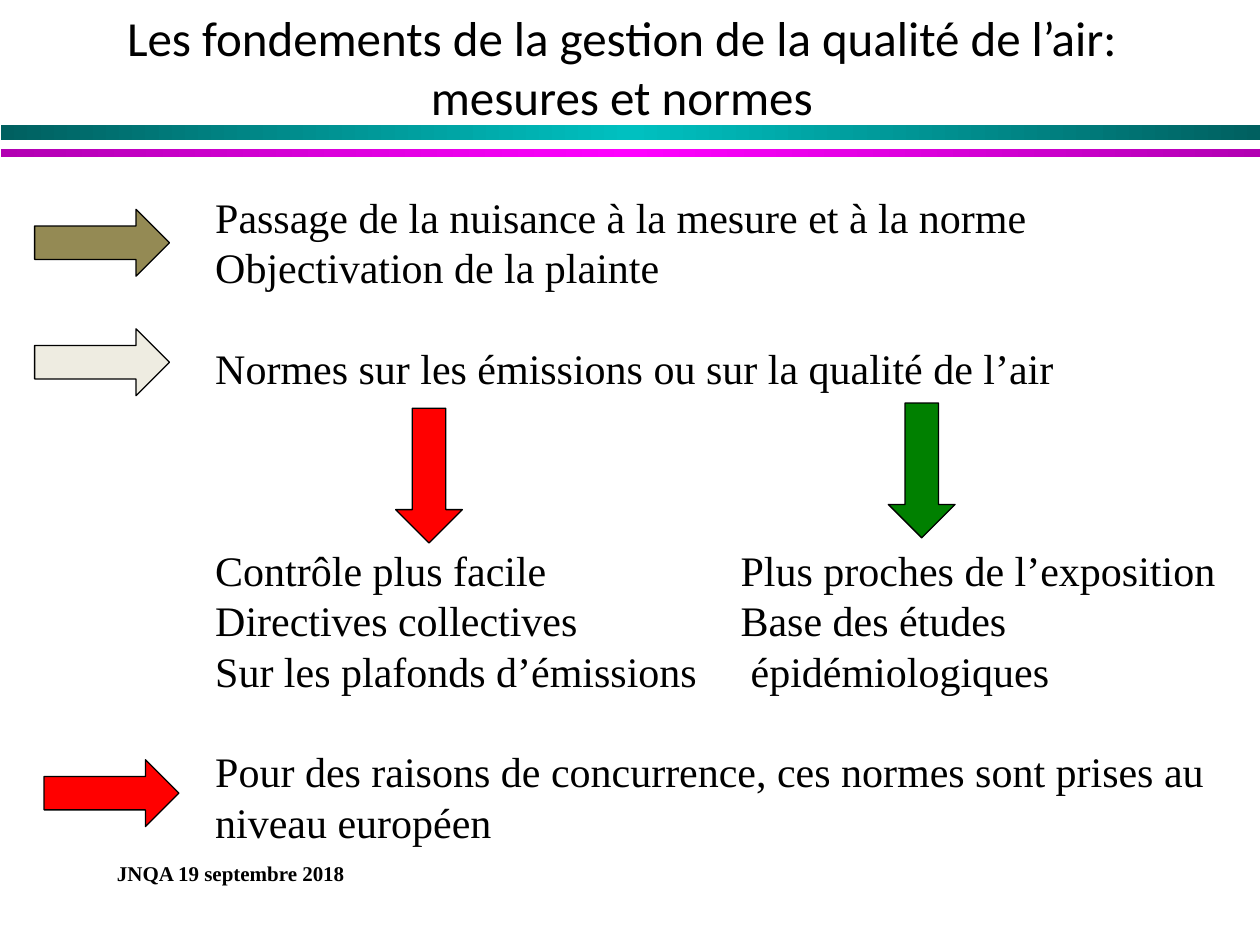
from copy import deepcopy

from pptx import Presentation
from pptx.dml.color import RGBColor
from pptx.enum.shapes import MSO_SHAPE
from pptx.enum.text import MSO_ANCHOR, PP_ALIGN
from pptx.oxml.ns import qn
from pptx.oxml.xmlchemy import OxmlElement
from pptx.util import Inches, Pt

RECTANGLE, RIGHT_ARROW = MSO_SHAPE.RECTANGLE, MSO_SHAPE.RIGHT_ARROW
TOP, MIDDLE = MSO_ANCHOR.TOP, MSO_ANCHOR.MIDDLE
LEFT, CENTER = PP_ALIGN.LEFT, PP_ALIGN.CENTER

BLACK = RGBColor(0x00, 0x00, 0x00)
DARK_TEAL = RGBColor(0x00, 0x60, 0x60)
TEAL = RGBColor(0x00, 0xC0, 0xC0)
PURPLE = RGBColor(0xB2, 0x00, 0xB2)
MAGENTA = RGBColor(0xFF, 0x00, 0xFF)
OLIVE = RGBColor(0x94, 0x8A, 0x54)
CREAM = RGBColor(0xEE, 0xEC, 0xE1)
RED = RGBColor(0xFF, 0x00, 0x00)
GREEN = RGBColor(0x00, 0x80, 0x00)

TITLE_FORMAT = {"name": "Calibri", "size": Pt(28)}
BODY_FORMAT = {"name": "Times New Roman", "size": Pt(24)}
FOOTER_FORMAT = {"name": "Times New Roman", "size": Pt(12), "bold": True}
ROW = 28.8  # height of one body line, in points

prs = Presentation()
prs.slide_width, prs.slide_height = Inches(10), Inches(7.5)
slide = prs.slides.add_slide(prs.slide_layouts[6])


def area(left, top, width, height):
    """Turn percentages of the slide's size into a position and size."""
    across, down = prs.slide_width / 100, prs.slide_height / 100
    return [round(v) for v in (left * across, top * down, width * across, height * down)]


def add_text(place, lines, font_format, align=LEFT, anchor=TOP):
    """Add a wrapped text box with one paragraph per line and return its paragraphs."""
    frame = slide.shapes.add_textbox(*area(*place)).text_frame
    frame.word_wrap = True
    frame.vertical_anchor = anchor
    frame.text = "\n".join(lines)
    for paragraph in frame.paragraphs:
        paragraph.alignment = align
        for run in paragraph.runs:
            run.font.color.rgb = BLACK
            for attribute, value in font_format.items():
                setattr(run.font, attribute, value)
    return frame.paragraphs


# Ruled bands under the title: top, height, edge colour, middle colour
for top, height, edge, middle in [
    (13.2, 1.6, DARK_TEAL, TEAL),
    (15.75, 0.85, PURPLE, MAGENTA),
]:
    band = slide.shapes.add_shape(RECTANGLE, *area(0.1, top, 99.9, height))
    band.shadow.inherit = False
    band.line.fill.background()
    band.fill.gradient()
    band.fill.gradient_angle = 0
    stops = next(band.element.iter(qn("a:gsLst")))
    stops.append(deepcopy(stops[0]))
    for stop, position, color in zip(band.fill.gradient_stops, (0, 0.5, 1), (edge, middle, edge)):
        stop.position = position
        stop.color.rgb = color

add_text((3.5, -1.33, 91.7, 16.67),
         ["Les fondements de la gestion de la qualité de l’air:\vmesures et normes"],
         TITLE_FORMAT, CENTER, MIDDLE)
add_text((8.3, 90.4, 23.1, 6.67), ["JNQA 19 septembre 2018"], FOOTER_FORMAT)

# Body: line, empty rows above it, position of its second column in inches
body = [
    ("Passage de la nuisance à la mesure et à la norme", 0, None),
    ("Objectivation de la plainte", 0, None),
    ("Normes sur les émissions ou sur la qualité de l’air", 1, None),
    ("Contrôle plus facile\tPlus proches de l’exposition", 3, 4.17),
    ("Directives collectives\tBase des études", 0, 4.17),
    ("Sur les plafonds d’émissions\tépidémiologiques", 0, 4.25),
    ("Pour des raisons de concurrence, ces normes sont prises au niveau européen", 1, None),
]
paragraphs = add_text((16.1, 19.6, 82.3, 70), [line for line, _, _ in body], BODY_FORMAT)
for paragraph, (_, empty_rows, column) in zip(paragraphs, body):
    if column:
        tabs = OxmlElement("a:tabLst")
        tab = OxmlElement("a:tab")
        tab.set("pos", str(Inches(column)))
        tab.set("algn", "l")
        tabs.append(tab)
        paragraph._p.get_or_add_pPr().append(tabs)
    paragraph.line_spacing = Pt(ROW)
    if empty_rows:
        paragraph.space_before = Pt(ROW * empty_rows)

# Arrows beside the points and down to the two consequences
for left, top, color, rotation in [
    (2.75, 22.15, OLIVE, 0),
    (2.75, 34.8, CREAM, 0),
    (3.5, 80.4, RED, 0),
    (28.7, 46.8, RED, 90),
    (67.8, 46.25, GREEN, 90),
]:
    arrow = slide.shapes.add_shape(RIGHT_ARROW, *area(left, top, 10.7, 7.07))
    arrow.shadow.inherit = False
    arrow.rotation = rotation
    arrow.fill.solid()
    arrow.fill.fore_color.rgb = color
    arrow.line.color.rgb = BLACK
    arrow.line.width = Pt(0.75)

prs.save("out.pptx")
